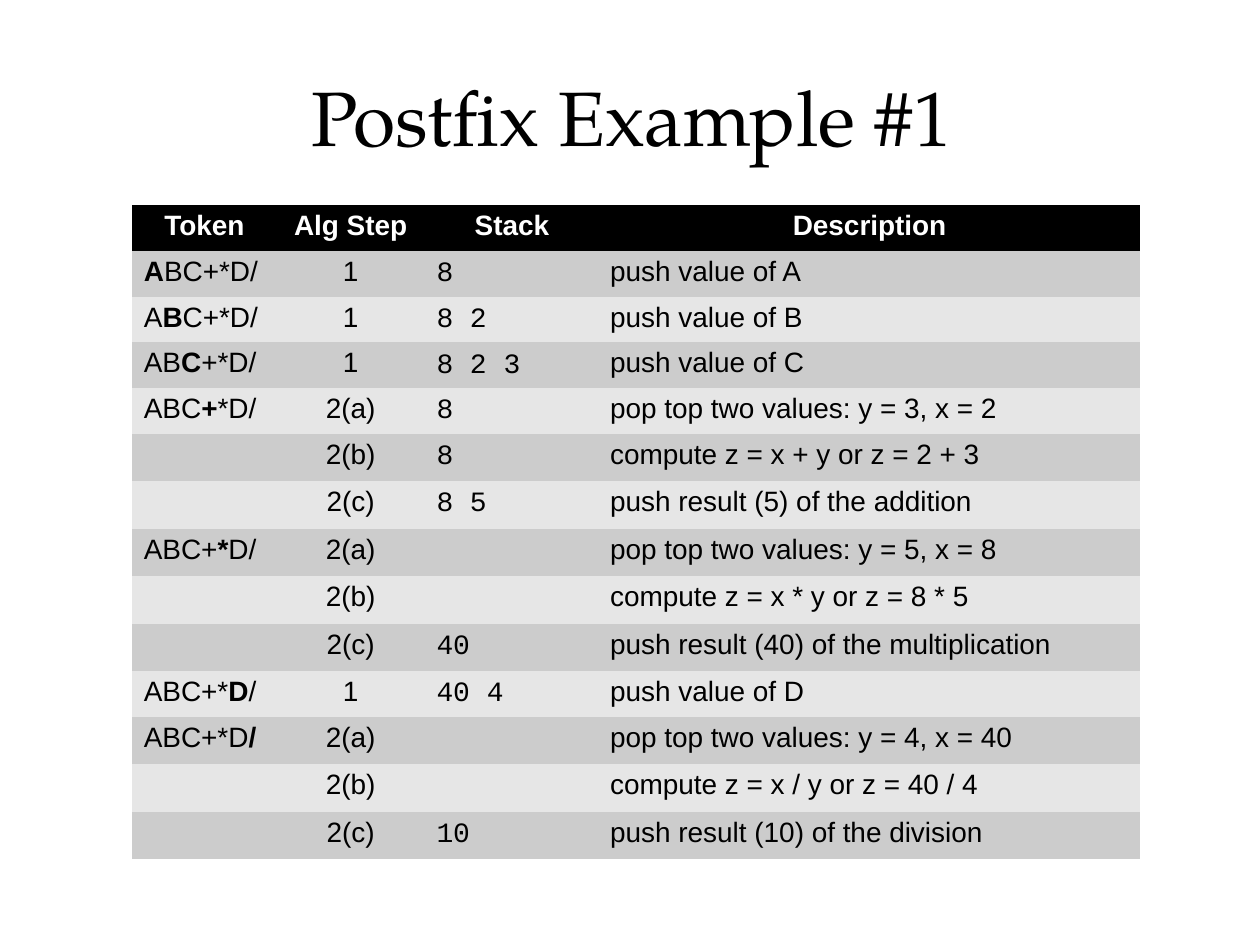
from lxml.etree import SubElement
from pptx import Presentation
from pptx.dml.color import RGBColor
from pptx.enum.text import MSO_ANCHOR as Anchor, PP_ALIGN as Align
from pptx.oxml import parse_xml
from pptx.oxml.ns import nsdecls, qn
from pptx.util import Cm, Pt

EXPRESSION = "ABC+*D/"
HEADINGS = ["Token", "Alg Step", "Stack", "Description"]
COLUMN_WIDTHS = [2.9, 3.0, 3.5, 10.92]
ROW_HEIGHT = 0.92

# Token being read (None while it is still in progress), step, stack, description
STEPS = [
    ("A", "1", "8", "push value of A"),
    ("B", "1", "8 2", "push value of B"),
    ("C", "1", "8 2 3", "push value of C"),
    ("+", "2(a)", "8", "pop top two values: y = 3, x = 2"),
    (None, "2(b)", "8", "compute z = x + y or z = 2 + 3"),
    (None, "2(c)", "8 5", "push result (5) of the addition"),
    ("*", "2(a)", "", "pop top two values: y = 5, x = 8"),
    (None, "2(b)", "", "compute z = x * y or z = 8 * 5"),
    (None, "2(c)", "40", "push result (40) of the multiplication"),
    ("D", "1", "40 4", "push value of D"),
    ("/", "2(a)", "", "pop top two values: y = 4, x = 40"),
    (None, "2(b)", "", "compute z = x / y or z = 40 / 4"),
    (None, "2(c)", "10", "push result (10) of the division"),
]


def color(code):
    return RGBColor.from_string(code)


class SlideBuilder:
    title_font, body_font, stack_font = "TeX Gyre Pagella", "Arial", "Courier New"
    title_size, body_size = 44, 16
    ink, paper = "000000", "FFFFFF"
    bands = ["CCCCCC", "E6E6E6"]

    def __init__(self, slide):
        self.slide = slide

    def format_span(self, span, font, size, ink, bold=False):
        span.font.name, span.font.size, span.font.bold = font, Pt(size), bold
        span.font.color.rgb = color(ink)

    def title(self, text, left, top, width, height):
        box = self.slide.shapes.add_textbox(Cm(left), Cm(top), Cm(width), Cm(height))
        frame = box.text_frame
        frame.word_wrap = True
        frame.vertical_anchor = Anchor.MIDDLE
        frame.margin_top, frame.margin_bottom = Cm(0.08), Cm(0.13)
        frame.text = text
        para = frame.paragraphs[0]
        para.alignment = Align.CENTER
        self.format_span(para.runs[0], self.title_font, self.title_size, self.ink)

    def table(self, left, top, widths, row_height, row_count):
        frame = self.slide.shapes.add_table(
            row_count, len(widths), Cm(left), Cm(top),
            Cm(sum(widths)), Cm(row_height * row_count))
        table = frame.table
        table.horz_banding = False
        for column, width in zip(table.columns, widths):
            column.width = Cm(width)
        for row in table.rows:
            row.height = Cm(row_height)
        return table

    def borders(self, cell):
        properties = cell._tc.get_or_add_tcPr()
        for index, side in enumerate(["lnL", "lnR", "lnT", "lnB"]):
            properties.insert(index, parse_xml(
                f'<a:{side} {nsdecls("a")} w="360"><a:solidFill>'
                f'<a:srgbClr val="{self.paper}"/></a:solidFill></a:{side}>'))

    def cell(self, cell, parts, fill, ink, font=None, align=Align.LEFT):
        """Fill one cell; parts is a list of (text, bold) pairs."""
        cell.fill.solid()
        cell.fill.fore_color.rgb = color(fill)
        self.borders(cell)
        cell.margin_left = cell.margin_right = Cm(0.23)
        cell.margin_top, cell.margin_bottom = Cm(0.15), Cm(0.13)
        para = cell.text_frame.paragraphs[0]
        para.alignment, para.line_spacing = align, 0.93
        for text, bold in parts:
            if text:
                span = para.add_run()
                span.text = text
                self.format_span(span, font or self.body_font, self.body_size, ink, bold)
        if not para.runs:
            # Keeps an empty cell from stretching its row
            SubElement(para._p, qn("a:endParaRPr"), sz=str(self.body_size * 100))


def token_parts(token):
    if token is None:
        return []
    before, after = EXPRESSION.split(token)
    return [(before, False), (token, True), (after, False)]


def main():
    deck = Presentation()
    deck.slide_width, deck.slide_height = Cm(25.4), Cm(19.05)
    page = SlideBuilder(deck.slides.add_slide(deck.slide_layouts[6]))

    # Title
    page.title("Postfix Example #1", 1.27, 0.76, 22.94, 3.18)

    # Table header
    table = page.table(2.67, 4.14, COLUMN_WIDTHS, ROW_HEIGHT, len(STEPS) + 1)
    for column, heading in enumerate(HEADINGS):
        page.cell(table.cell(0, column), [(heading, True)],
                  page.ink, page.paper, align=Align.CENTER)

    # One row for each step of the evaluation
    fonts = [page.body_font, page.body_font, page.stack_font, page.body_font]
    aligns = [Align.LEFT, Align.CENTER, Align.LEFT, Align.LEFT]
    for row, (token, *texts) in enumerate(STEPS, start=1):
        fill = page.bands[(row - 1) % 2]
        contents = [token_parts(token)] + [[(text, False)] for text in texts]
        for column, parts in enumerate(contents):
            page.cell(table.cell(row, column), parts, fill, page.ink,
                      fonts[column], aligns[column])

    deck.save("out.pptx")


if __name__ == "__main__":
    main()
